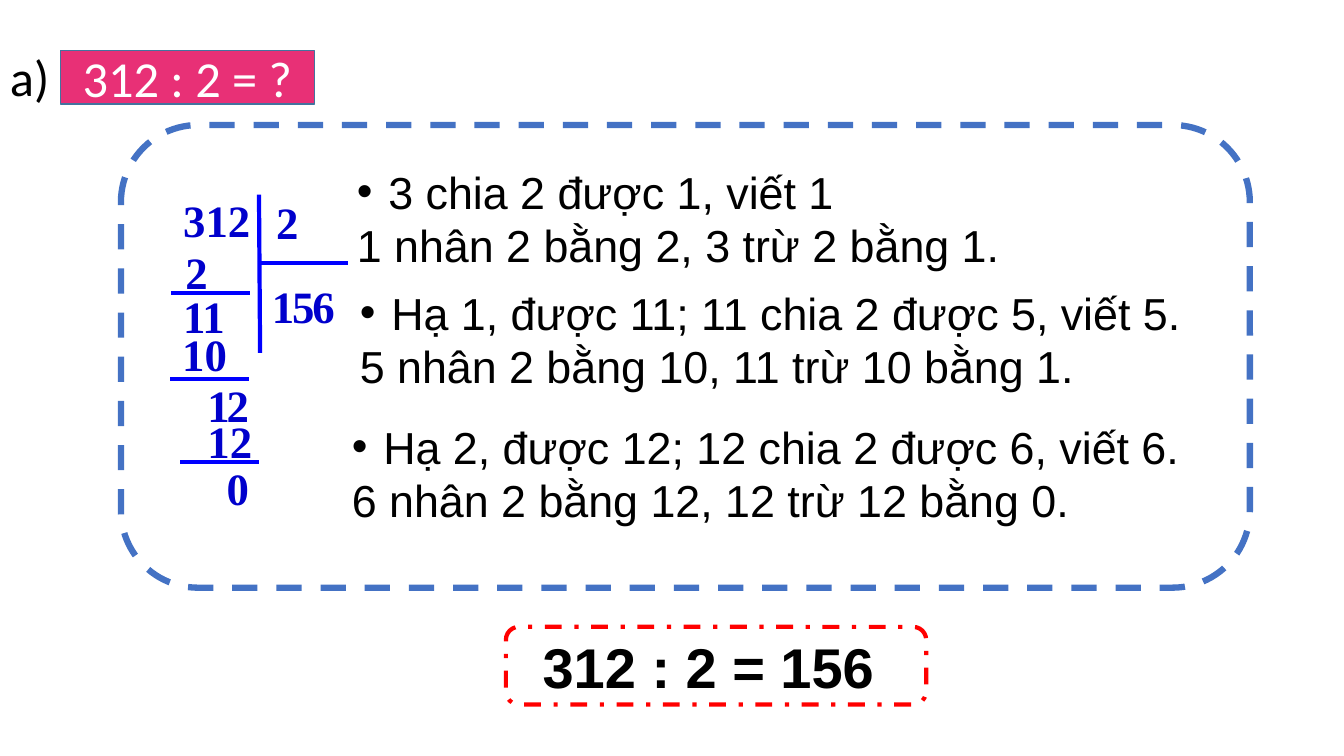
from lxml import etree
from pptx import Presentation
from pptx.dml.color import RGBColor
from pptx.enum import dml, shapes, text
from pptx.oxml import ns
from pptx.util import Pt

BLACK = RGBColor(0x00, 0x00, 0x00)
WHITE = RGBColor(0xFF, 0xFF, 0xFF)
PINK = RGBColor(0xE8, 0x30, 0x76)
STEEL = RGBColor(0x43, 0x73, 0x9E)
FRAME_BLUE = RGBColor(0x44, 0x72, 0xC4)
RULE_BLUE = RGBColor(0x00, 0x00, 0xFF)
DIGIT_BLUE = RGBColor(0x00, 0x00, 0xCC)
RED = RGBColor(0xFF, 0x00, 0x00)

HEADING = "312 : 2 = ?"
HEADING_BOX = (43.2, 36, 181.4, 38.2)
LABEL = "a)"
LABEL_BOX = (0, 29.5, 72.7, 51)
RESULT = "312 : 2 = 156 "
RESULT_BOX = (361.4, 447.8, 300.2, 55.4)
FRAME_BOX = (86.4, 89.3, 806.4, 330.5)

NUMBERS = [
    ("312", 123.8, 133.9, None),
    ("2", 190.1, 135.4, None),
    ("156", 187.2, 195.5, 14.4),
    ("2", 125.3, 171.4, None),
    ("11", 123.8, 203, 13.7),
    ("10", 123.1, 229.7, None),
    ("12", 141.1, 266.4, 13.7),
    ("12", 141.1, 291.6, None),
    ("0", 154.8, 325.4, None),
]
DIGIT_WIDTH, NUMBER_HEIGHT = 16, 46
SUBTRACTIONS = [(122.4, 209.5), (121.7, 270.7), (128.9, 329.8)]
SUBTRACTION_LENGTH = 56.2
BRACKET = [(184.3, 187.9, 248.4, 187.9), (185, 139, 185.8, 252)]

STEPS = [
    (254.9, 117.4, 478.1, "3 chia 2 được 1, viết 1",
     "1 nhân 2 bằng 2, 3 trừ 2 bằng 1."),
    (257, 203.8, 648.7, "Hạ 1, được 11; 11 chia 2 được 5, viết 5.",
     "5 nhân 2 bằng 10, 11 trừ 10 bằng 1."),
    (251.3, 299.5, 635, "Hạ 2, được 12; 12 chia 2 được 6, viết 6.",
     "6 nhân 2 bằng 12, 12 trừ 12 bằng 0."),
]
STEP_HEIGHT, BULLET_INDENT = 77.8, 22.5

LABEL_FONT = dict(name="Calibri", size=Pt(36), bold=False, color=BLACK)
HEADING_FONT = dict(LABEL_FONT, color=WHITE)
RESULT_FONT = dict(name="Arial", size=Pt(40), bold=True, color=BLACK)
STEP_FONT = dict(name="Arial", size=Pt(32), bold=False, color=BLACK)
NUMBER_FONT = dict(name="Times New Roman", size=Pt(32), bold=True, color=DIGIT_BLUE)


def format_font(font, values):
    for key, value in values.items():
        if key == "color":
            font.color.rgb = value
        else:
            setattr(font, key, value)


def paint(sp, fill, line, width, dash=None):
    sp.fill.solid()
    sp.fill.fore_color.rgb = fill
    sp.line.color.rgb = line
    sp.line.width = Pt(width)
    if dash:
        sp.line.dash_style = dash


def add_rounded(s, box, *look):
    sp = s.shapes.add_shape(shapes.MSO_SHAPE.ROUNDED_RECTANGLE, *map(Pt, box))
    sp.shadow.inherit = False
    paint(sp, *look)
    return sp


def write_centred(sp, words, font):
    tf = sp.text_frame
    tf.text = words
    tf.word_wrap = True
    tf.auto_size = text.MSO_AUTO_SIZE.NONE
    tf.vertical_anchor = text.MSO_ANCHOR.MIDDLE
    p = tf.paragraphs[0]
    p.alignment = text.PP_ALIGN.CENTER
    format_font(p.runs[0].font, font)


def add_text(s, box, words, font):
    tf = s.shapes.add_textbox(*map(Pt, box)).text_frame
    tf.word_wrap = True
    p = tf.paragraphs[0]
    p.text = words
    format_font(p.runs[0].font, font)
    return tf


def add_line(s, x1, y1, x2, y2):
    line = s.shapes.add_connector(
        shapes.MSO_CONNECTOR.STRAIGHT, *map(Pt, (x1, y1, x2, y2)))
    line.line.color.rgb = RULE_BLUE
    line.line.width = Pt(3)
    etree.SubElement(line._element.spPr, ns.qn("a:effectLst"))


def add_bullet(p):
    pPr = p._p.get_or_add_pPr()
    pPr.set("marL", str(Pt(BULLET_INDENT)))
    pPr.set("indent", str(-Pt(BULLET_INDENT)))
    etree.SubElement(pPr, ns.qn("a:buFont"), typeface="Arial")
    etree.SubElement(pPr, ns.qn("a:buChar"), char="•")


def add_heading(s):
    sp = s.shapes.title
    sp.left, sp.top, sp.width, sp.height = map(Pt, HEADING_BOX)
    geometry = etree.SubElement(
        sp._element.spPr, ns.qn("a:prstGeom"), prst="roundRect")
    etree.SubElement(geometry, ns.qn("a:avLst"))
    paint(sp, PINK, STEEL, 1)
    write_centred(sp, HEADING, HEADING_FONT)


def add_number(s, number, x, y, pitch):
    parts = list(number) if pitch else [number]
    for i, part in enumerate(parts):
        width = DIGIT_WIDTH * len(part) + 18
        add_text(s, (x + i * (pitch or 0), y, width, NUMBER_HEIGHT), part, NUMBER_FONT)


def add_step(s, x, y, width, first, second):
    tf = add_text(s, (x, y, width, STEP_HEIGHT), first, STEP_FONT)
    for side in ("left", "top", "right", "bottom"):
        setattr(tf, "margin_" + side, 0)
    add_bullet(tf.paragraphs[0])
    p = tf.add_paragraph()
    p.text = second
    format_font(p.runs[0].font, STEP_FONT)


def main():
    prs = Presentation()
    prs.slide_width, prs.slide_height = Pt(960), Pt(540)
    s = prs.slides.add_slide(prs.slide_layouts[5])
    add_heading(s)
    add_text(s, LABEL_BOX, LABEL, LABEL_FONT)
    add_rounded(s, FRAME_BOX, WHITE, FRAME_BLUE, 4.5, dml.MSO_LINE.DASH)
    for x, y in SUBTRACTIONS:
        add_line(s, x, y, x + SUBTRACTION_LENGTH, y)
    for ends in BRACKET:
        add_line(s, *ends)
    for number in NUMBERS:
        add_number(s, *number)
    for step in STEPS:
        add_step(s, *step)
    result = add_rounded(s, RESULT_BOX, WHITE, RED, 3, dml.MSO_LINE.DASH_DOT)
    write_centred(result, RESULT, RESULT_FONT)
    prs.save("out.pptx")


if __name__ == "__main__":
    main()
